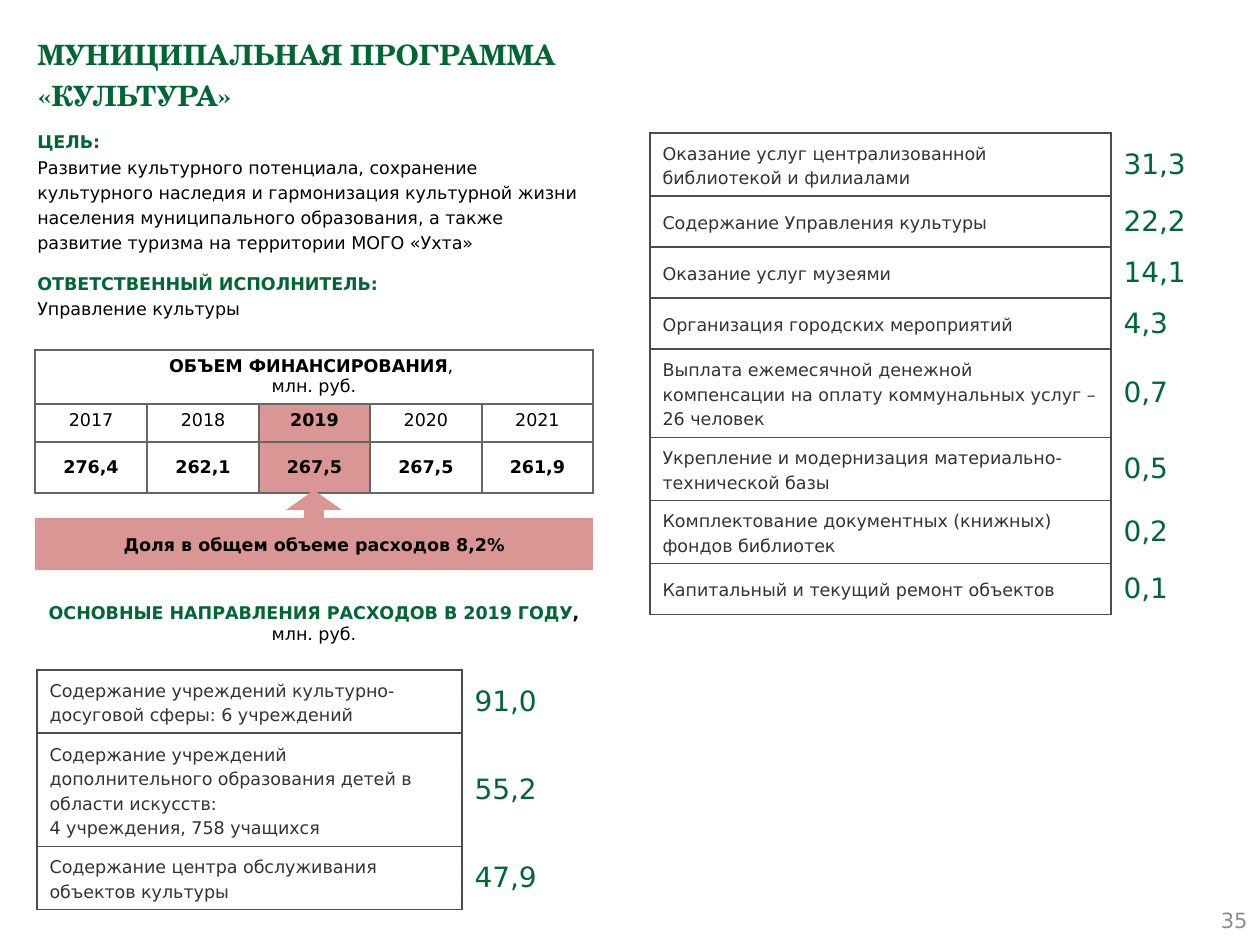
from dataclasses import dataclass

from lxml.etree import SubElement
from pptx import Presentation
from pptx.dml.color import RGBColor
from pptx.enum.shapes import MSO_SHAPE
from pptx.enum.text import MSO_ANCHOR, MSO_AUTO_SIZE, PP_ALIGN
from pptx.oxml.ns import qn
from pptx.util import Pt


@dataclass(frozen=True)
class Theme:
    head: str = "TeX Gyre Schola"
    body: str = "DejaVu Sans"
    green: str = "006633"
    black: str = "000000"
    dark: str = "333333"
    pale: str = "8C8C8C"
    pink: str = "D99694"
    grid: str = "666666"
    frame: str = "4D4D4D"
    small: int = 10
    note: int = 12
    big: int = 16


T = Theme()
PX = 914400 // 126
PLAIN_STYLE = "{2D5ABB26-0587-4C30-8999-92F81FD0307C}"

# A paragraph is a list of runs: (text, format that differs)
GREEN = {"color": T.green, "bold": True}
BOLD = {"bold": True}
TITLE = "МУНИЦИПАЛЬНАЯ ПРОГРАММА \v«КУЛЬТУРА»"
GOAL = [
    [("ЦЕЛЬ:", GREEN)],
    [("Развитие культурного потенциала, сохранение культурного наследия и "
      "гармонизация культурной жизни населения муниципального образования, "
      "а также развитие туризма на территории МОГО «Ухта»", {})],
    [("ОТВЕТСТВЕННЫЙ ИСПОЛНИТЕЛЬ:", GREEN)],
    [("Управление культуры", {})],
]
FUNDS_HEAD = [[("ОБЪЕМ ФИНАНСИРОВАНИЯ", BOLD), (", ", {})], [("млн. руб.", {})]]
FUNDS = [("2017", "276,4"), ("2018", "262,1"), ("2019", "267,5"),
         ("2020", "267,5"), ("2021", "261,9")]
FOCUS = "2019"
SHARE = "Доля в общем объеме расходов 8,2%"
AREAS = [[("ОСНОВНЫЕ НАПРАВЛЕНИЯ РАСХОДОВ В 2019 ГОДУ", GREEN),
          (", ", BOLD), ("млн. руб.", {})]]
MAIN = [
    ("Содержание учреждений культурно-досуговой сферы: 6 учреждений", "91,0"),
    ("Содержание учреждений дополнительного образования детей в области "
     "искусств:\n4 учреждения, 758 учащихся", "55,2"),
    ("Содержание центра обслуживания объектов культуры", "47,9"),
]
OTHER = [
    ("Оказание услуг централизованной библиотекой и филиалами", "31,3"),
    ("Содержание Управления культуры", "22,2"),
    ("Оказание услуг музеями", "14,1"),
    ("Организация городских мероприятий", "4,3"),
    ("Выплата ежемесячной денежной компенсации на оплату коммунальных "
     "услуг – 26 человек", "0,7"),
    ("Укрепление и модернизация материально-технической базы", "0,5"),
    ("Комплектование документных (книжных) фондов библиотек", "0,2"),
    ("Капитальный и текущий ремонт объектов", "0,1"),
]
PAGE = "35"


def px(*nums):
    return [n * PX for n in nums]


def rgb(code):
    return RGBColor.from_string(code)


def write(frame, text, size=T.small, color=T.black, font=T.body, bold=False,
          align=PP_ALIGN.LEFT, lead=None, anchor=MSO_ANCHOR.TOP):
    """Fill a text frame from a string or from a list of paragraphs."""
    if isinstance(text, str):
        text = [[(line, {})] for line in text.split("\n")]
    frame.word_wrap = True
    frame.vertical_anchor = anchor
    for i, runs in enumerate(text):
        para = frame.add_paragraph() if i else frame.paragraphs[0]
        para.alignment = align
        if lead:
            para.line_spacing = lead
        for words, diff in runs:
            look = {"color": color, "bold": bold, **diff}
            for j, part in enumerate(words.split("\v")):
                if j:
                    para.add_line_break()
                run = para.add_run()
                run.text = part
                run.font.name = font
                run.font.size = Pt(size)
                run.font.bold = look["bold"]
                run.font.color.rgb = rgb(look["color"])


def border(cell, sides, color):
    props = cell._tc.get_or_add_tcPr()
    for side in sides:
        line = SubElement(props, qn("a:ln" + side), w=str(Pt(1)))
        fill = SubElement(line, qn("a:solidFill"))
        SubElement(fill, qn("a:srgbClr"), val=color)


def paint(item, color=None):
    if color:
        item.fill.solid()
        item.fill.fore_color.rgb = rgb(color)
    else:
        item.fill.background()


def grid(slide, left, top, cols, rows):
    """Add an unstyled table with the given column widths and row heights."""
    box = px(left, top, sum(cols), sum(rows))
    table = slide.shapes.add_table(len(rows), len(cols), *box).table
    table.first_row = table.horz_banding = False
    table._tbl.tblPr.find(qn("a:tableStyleId")).text = PLAIN_STYLE
    for col, wide in zip(table.columns, cols):
        col.width = wide * PX
    for row, high in zip(table.rows, rows):
        row.height = high * PX
    return table


def add_funds(slide):
    table = grid(slide, 35, 350, [112, 112, 111, 112, 111], [52, 38, 51])
    for cell in table.iter_cells():
        border(cell, "LRTB", T.grid)
        cell.margin_left = cell.margin_right = 6 * PX
        cell.margin_top = cell.margin_bottom = 6 * PX
        paint(cell)
    head = table.cell(0, 0)
    head.merge(table.cell(0, len(FUNDS) - 1))
    write(head.text_frame, FUNDS_HEAD, align=PP_ALIGN.CENTER)
    for i, (year, total) in enumerate(FUNDS):
        top, low = table.cell(1, i), table.cell(2, i)
        write(top.text_frame, year, bold=year == FOCUS, align=PP_ALIGN.CENTER)
        write(low.text_frame, total, bold=True, align=PP_ALIGN.CENTER)
        low.vertical_anchor = MSO_ANCHOR.MIDDLE
        if year == FOCUS:
            paint(top, T.pink)
            paint(low, T.pink)


def add_costs(slide, left, top, cols, items):
    table = grid(slide, left, top, cols, [51] * len(items))
    for i, (name, sum_) in enumerate(items):
        label, value = table.cell(i, 0), table.cell(i, 1)
        border(label, "LRTB", T.frame)
        border(value, "L", T.frame)
        write(label.text_frame, name, color=T.dark, lead=1.2)
        write(value.text_frame, sum_, size=T.big, color=T.green)
        for cell in (label, value):
            cell.vertical_anchor = MSO_ANCHOR.MIDDLE
            paint(cell)


def add_box(slide, kind, box, text, adjust, fill=None, **look):
    shape = slide.shapes.add_shape(kind, *px(*box))
    shape.shadow.inherit = False
    shape.line.fill.background()
    paint(shape, fill)
    for i, part in enumerate(adjust):
        shape.adjustments[i] = part
    write(shape.text_frame, text, align=PP_ALIGN.CENTER,
          anchor=MSO_ANCHOR.MIDDLE, **look)


def add_text(slide, box, text, **look):
    frame = slide.shapes.add_textbox(*px(*box)).text_frame
    write(frame, text, **look)
    return frame


def main():
    deck = Presentation()
    deck.slide_width, deck.slide_height = px(1260, 945)
    slide = deck.slides.add_slide(deck.slide_layouts[5])

    title = slide.shapes.title
    title.left, title.top, title.width, title.height = px(25, 25, 1211, 100)
    write(title.text_frame, TITLE, size=T.big, color=T.green, font=T.head,
          bold=True, lead=1.2)
    title.text_frame.auto_size = MSO_AUTO_SIZE.NONE

    add_text(slide, (966, 895, 294, 50), PAGE, size=T.note, color=T.pale,
             align=PP_ALIGN.RIGHT, anchor=MSO_ANCHOR.MIDDLE)
    goal = add_text(slide, (25, 121, 567, 207), GOAL, lead=1.2)
    goal.auto_size = MSO_AUTO_SIZE.SHAPE_TO_FIT_TEXT
    goal.paragraphs[2].space_before = Pt(9)

    add_funds(slide)
    add_costs(slide, 650, 133, [461, 253], OTHER)
    add_box(slide, MSO_SHAPE.PENTAGON, (35, 596, 558, 54), AREAS, [0])
    add_box(slide, MSO_SHAPE.UP_ARROW_CALLOUT, (35, 490, 558, 80), SHARE,
            [0.25, 0.35, 0.25, 0.65], fill=T.pink, bold=True)
    add_costs(slide, 37, 670, [425, 238], MAIN)
    deck.save("out.pptx")


if __name__ == "__main__":
    main()
